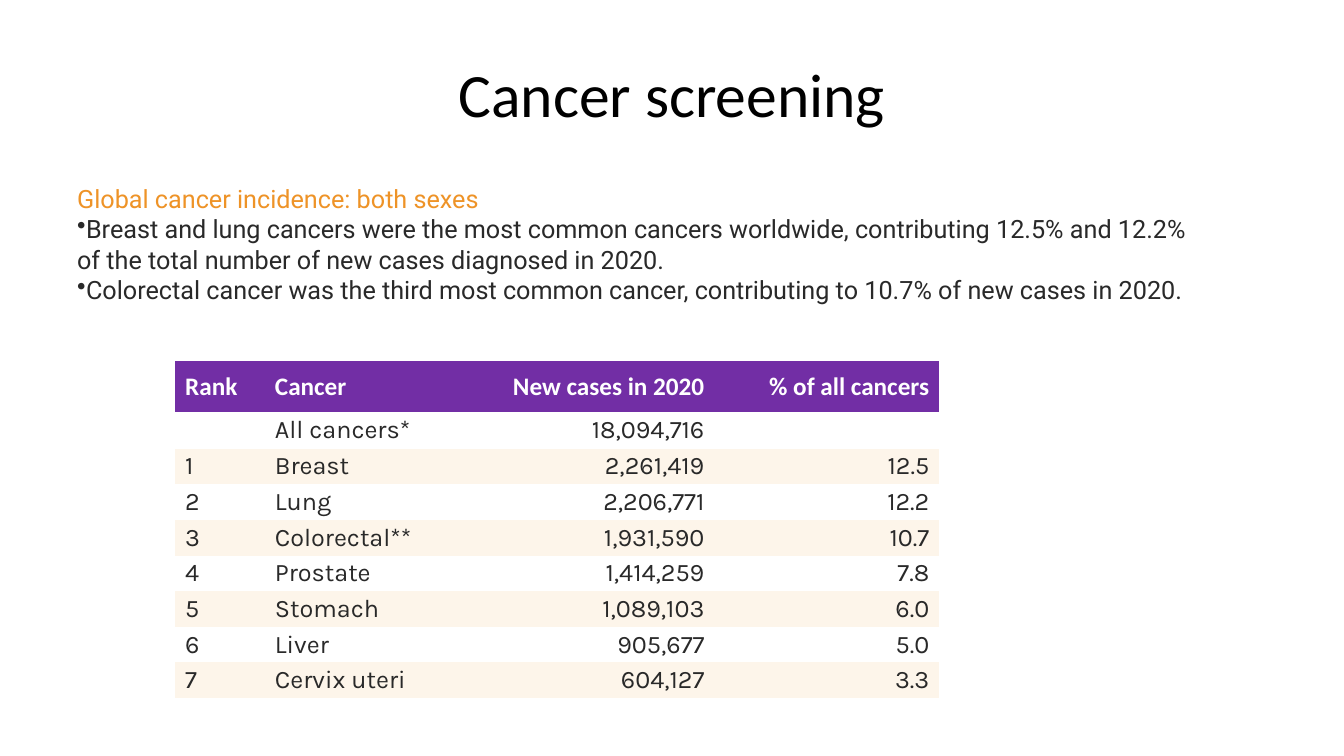
from pptx import Presentation
from pptx.dml.color import RGBColor as Rgb
from pptx.enum.text import MSO_ANCHOR as Anchor, PP_ALIGN as Align
from pptx.oxml.ns import qn
from pptx.util import Inches, Pt
from lxml.etree import SubElement as Sub

HUES = {"title": "000000", "head": "EE9327", "text": "292929", "white": "FFFFFF",
        "purple": "722EA5", "cream": "FDF5EA"}
PLAIN = "{2D5ABB26-0587-4C30-8999-92F81FD0307C}"  # table style: no style, no grid

TITLE = "Cancer screening"
LEAD = "Global cancer incidence: both sexes"
FACTS = [
    "Breast and lung cancers were the most common cancers worldwide, contributing "
    "12.5% and 12.2% of the total number of new cases diagnosed in 2020.",
    "Colorectal cancer was the third most common cancer, contributing to 10.7% of "
    "new cases in 2020.",
]
ROWS = [
    ("Rank", "Cancer", "New cases in 2020", "% of all cancers"),
    ("", "All cancers*", "18,094,716", ""),
    ("1", "Breast", "2,261,419", "12.5"),
    ("2", "Lung", "2,206,771", "12.2"),
    ("3", "Colorectal**", "1,931,590", "10.7"),
    ("4", "Prostate", "1,414,259", "7.8"),
    ("5", "Stomach", "1,089,103", "6.0"),
    ("6", "Liver", "905,677", "5.0"),
    ("7", "Cervix uteri", "604,127", "3.3"),
]
WIDTHS = [0.89, 2.23, 2.23, 2.23]
HEAD_H, ROW_H = 0.5, 0.33


def add_run(para, text, face, hue, size=18, bold=False):
    run = para.add_run()
    run.text = text
    font = run.font
    font.name, font.size, font.bold = face, Pt(size), bold
    font.color.rgb = Rgb.from_string(HUES[hue])


def add_title(slide, box):
    title = slide.shapes.title
    title.left, title.top, title.width, title.height = box
    frame = title.text_frame
    frame.vertical_anchor = Anchor.MIDDLE
    para = frame.paragraphs[0]
    para.alignment = Align.CENTER
    add_run(para, TITLE, "Calibri", "title", 44)


def add_facts(slide, box):
    frame = slide.shapes.add_textbox(*box).text_frame
    frame.word_wrap = True
    add_run(frame.paragraphs[0], LEAD, "Roboto", "head")
    for fact in FACTS:
        para = frame.add_paragraph()
        Sub(para._p.get_or_add_pPr(), qn("a:buChar"), char="•")
        add_run(para, fact, "Roboto", "text")


def fill_cell(cell, text, row, col):
    top = row == 0
    hue = "purple" if top else "white" if row % 2 else "cream"
    cell.fill.solid()
    cell.fill.fore_color.rgb = Rgb.from_string(HUES[hue])
    cell.vertical_anchor = Anchor.MIDDLE
    cell.margin_left = cell.margin_right = Inches(0.1)
    cell.margin_top = cell.margin_bottom = Inches(0.05 if top else 0.03)
    if text:
        para = cell.text_frame.paragraphs[0]
        para.alignment = Align.RIGHT if col > 1 else Align.LEFT
        add_run(para, text, "Calibri" if top else "Karla",
                "white" if top else "text", bold=top)


def add_ranks(slide, box):
    shape = slide.shapes.add_table(len(ROWS), len(WIDTHS), *box)
    for style in shape.element.iter(qn("a:tableStyleId")):
        style.text = PLAIN
    table = shape.table
    for col, width in zip(table.columns, WIDTHS):
        col.width = Inches(width)
    for r, row in enumerate(ROWS):
        table.rows[r].height = Inches(ROW_H if r else HEAD_H)
        for c, text in enumerate(row):
            fill_cell(table.cell(r, c), text, r, c)


def main():
    deck = Presentation()
    deck.slide_width, deck.slide_height = Inches(13.33), Inches(7.5)
    wide, high = deck.slide_width, deck.slide_height

    def share(x, y, w, h):
        return int(x * wide), int(y * high), int(w * wide), int(h * high)

    slide = deck.slides.add_slide(deck.slide_layouts[5])
    add_title(slide, share(0.05, 0.04, 0.9, 1 / 6))
    table_w, table_h = Inches(sum(WIDTHS)), Inches(HEAD_H + ROW_H * (len(ROWS) - 1))
    left, top, _, _ = share(0.1303, 0.478, 0, 0)
    add_ranks(slide, (left, top, table_w, table_h))
    add_facts(slide, share(0.05, 0.236, 0.85, 0.175))
    deck.save("out.pptx")


if __name__ == "__main__":
    main()
